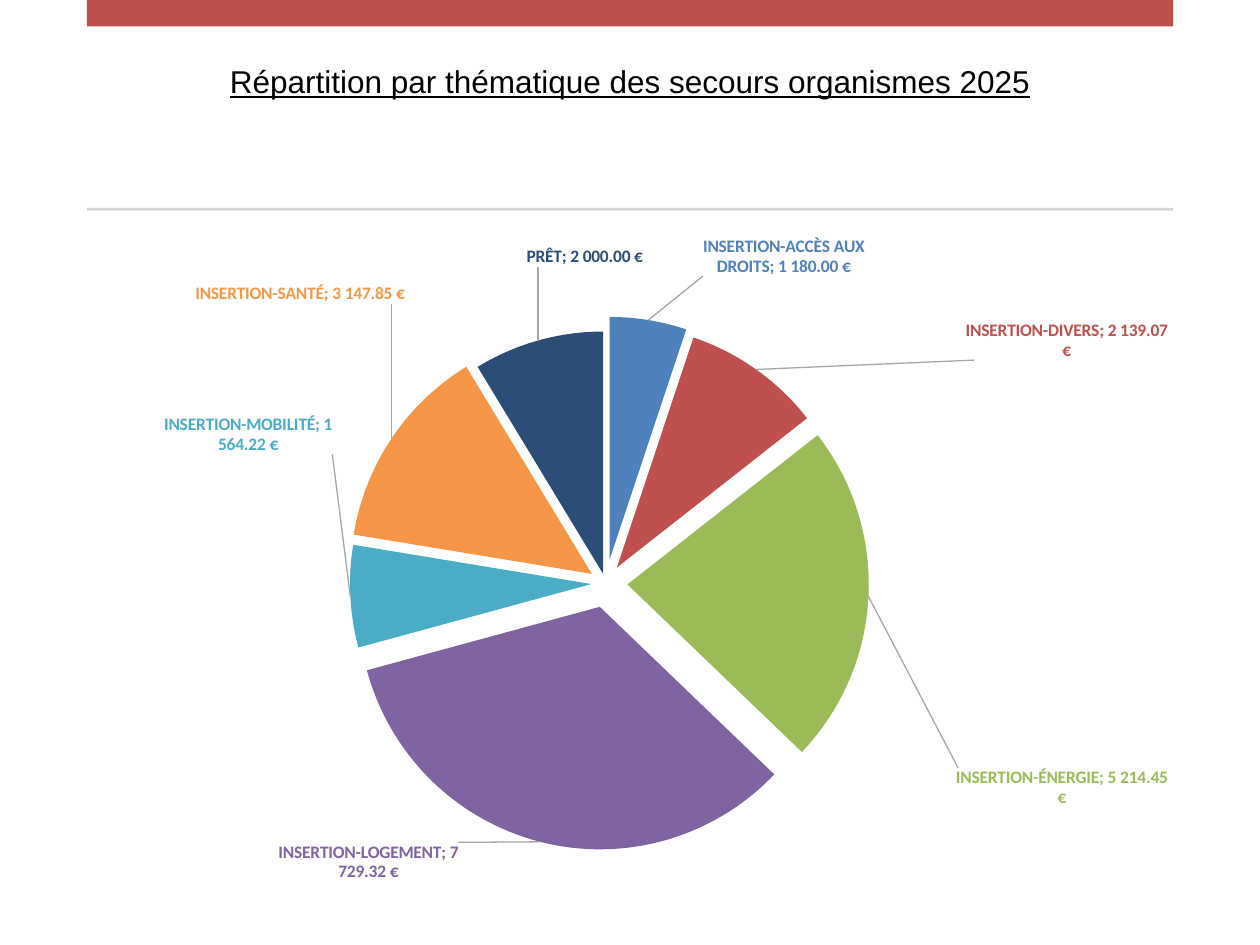
import pptx
import pptx.chart.data
import pptx.dml.color
import pptx.enum.chart
import pptx.enum.shapes
import pptx.enum.text
import pptx.oxml
import pptx.oxml.ns
import pptx.util
from dataclasses import dataclass


@dataclass(frozen=True)
class Theme:
    accent: str = "C0504D"
    rule: str = "D5D5D5"
    leader: str = "A6A6A6"
    ink: str = "000000"
    paper: str = "FFFFFF"
    title_font: str = "Arial"
    chart_font: str = "Calibri"
    title_size: int = 18
    label_size: int = 10


@dataclass(frozen=True)
class Slice:
    name: str
    amount: float
    color: str
    explosion: int
    shift: tuple


THEME = Theme()
WIDTH, HEIGHT = 10, 7.5
MARGIN = 0.069
CONTENT = 1 - 2 * MARGIN
EURO_FORMAT = '#\\ ##0.00" €"'
PLOT_AREA = {
    "xMode": "edge", "yMode": "edge",
    "x": 0.146, "y": 0.172, "w": 0.656, "h": 0.725,
}
SLICES = [
    Slice("INSERTION-ACCÈS AUX DROITS", 1180, "4F81BD", 10, (0.05, -0.055)),
    Slice("INSERTION-DIVERS", 2139.07, "C0504D", 8, (0.2, -0.005)),
    Slice("INSERTION-ÉNERGIE", 5214.45, "9BBB59", 9, (0.077, 0.285)),
    Slice("INSERTION-LOGEMENT", 7729.32, "8064A2", 10, (-0.075, -0.01)),
    Slice("INSERTION-MOBILITÉ", 1564.22, "4BACC6", 6, (-0.01, -0.243)),
    Slice("INSERTION-SANTÉ", 3147.85, "F79646", 7, (0.018, -0.195)),
    Slice("PRÊT", 2000, "2C4D75", 4, (0.1, -0.1)),
]


def rgb(color):
    return pptx.dml.color.RGBColor.from_string(color)


def frame(left, top, width, height):
    shares = ((left, WIDTH), (top, HEIGHT), (width, WIDTH), (height, HEIGHT))
    return [pptx.util.Inches(share * size) for share, size in shares]


def apply(target, values):
    for name, value in values.items():
        setattr(target, name, value)


def chart_xml(tag, body="", **attributes):
    listed = "".join(f' {name}="{value}"' for name, value in attributes.items())
    spaces = pptx.oxml.ns.nsdecls("c", "a")
    return pptx.oxml.parse_xml(f"<c:{tag} {spaces}{listed}>{body}</c:{tag}>")


def manual_layout(position, target=""):
    values = "".join(f'<c:{name} val="{value}"/>' for name, value in position.items())
    return chart_xml("layout", f"<c:manualLayout>{target}{values}</c:manualLayout>")


def add_band(page, top, height, color):
    band = page.shapes.add_shape(
        pptx.enum.shapes.MSO_SHAPE.RECTANGLE, *frame(MARGIN, top, CONTENT, height)
    )
    band.shadow.inherit = False
    band.fill.solid()
    band.fill.fore_color.rgb = rgb(color)
    band.line.fill.background()


def add_title(page, text):
    box = page.shapes.add_textbox(*frame(MARGIN, 0.05, CONTENT, 0.157))
    apply(box.text_frame, {
        "word_wrap": True,
        "vertical_anchor": pptx.enum.text.MSO_ANCHOR.TOP,
        "margin_top": pptx.util.Inches(0.15),
    })
    para = box.text_frame.paragraphs[0]
    apply(para, {"alignment": pptx.enum.text.PP_ALIGN.CENTER, "line_spacing": 0.9})
    span = para.add_run()
    span.text = text
    apply(span.font, {
        "name": THEME.title_font,
        "size": pptx.util.Pt(THEME.title_size),
        "underline": True,
    })
    span.font.color.rgb = rgb(THEME.ink)


def style_slice(point, part):
    point.format.fill.solid()
    point.format.fill.fore_color.rgb = rgb(part.color)
    point.format.line.fill.background()
    shape_format = point._element.xpath(f"c:dPt[c:idx/@val='{point._idx}']/c:spPr")[0]
    shape_format.addprevious(chart_xml("explosion", val=part.explosion))


def style_label(point, part):
    label = point.data_label
    apply(label.font, {
        "name": THEME.chart_font,
        "size": pptx.util.Pt(THEME.label_size),
        "bold": True,
    })
    label.font.color.rgb = rgb(part.color)
    label.position = pptx.enum.chart.XL_LABEL_POSITION.OUTSIDE_END
    node = point._element.xpath(f"c:dLbls/c:dLbl[c:idx/@val='{point._idx}']")[0]
    layout = manual_layout(dict(zip("xy", part.shift)))
    node.xpath("c:idx")[0].addnext(layout)
    code = EURO_FORMAT.replace('"', "&quot;")
    layout.addnext(chart_xml("numFmt", formatCode=code, sourceLinked=0))
    node.xpath("c:showCatName")[0].set("val", "1")
    node.append(chart_xml("separator", "; "))


def add_leader_lines(labels):
    fill = f'<a:solidFill><a:srgbClr val="{THEME.leader}"/></a:solidFill>'
    line = f'<c:spPr><a:ln w="9525">{fill}</a:ln></c:spPr>'
    labels._element.xpath("c:showLeaderLines")[0].addnext(chart_xml("leaderLines", line))


def add_pie(page):
    data = pptx.chart.data.CategoryChartData(number_format=EURO_FORMAT)
    data.categories = [part.name for part in SLICES]
    data.add_series("Series 1", [part.amount for part in SLICES])
    chart = page.shapes.add_chart(
        pptx.enum.chart.XL_CHART_TYPE.PIE, *frame(0.079, 0.239, 0.852, 0.708), data
    ).chart
    apply(chart, {"has_legend": False, "has_title": False})
    apply(chart.font, {"name": THEME.chart_font, "size": pptx.util.Pt(THEME.label_size)})
    chart.font.color.rgb = rgb(THEME.ink)
    plot = chart.plots[0]
    plot.vary_by_categories = True
    series = plot.series[0]
    labels = series.data_labels
    apply(labels, {
        "show_value": True,
        "show_category_name": True,
        "show_percentage": False,
        "number_format": EURO_FORMAT,
        "number_format_is_linked": False,
        "position": pptx.enum.chart.XL_LABEL_POSITION.OUTSIDE_END,
    })
    add_leader_lines(labels)
    for index, part in enumerate(SLICES):
        point = series.points[index]
        style_slice(point, part)
        style_label(point, part)
    area = chart._chartSpace.xpath("c:chart/c:plotArea")[0]
    for layout in area.xpath("c:layout"):
        area.remove(layout)
    area.insert(0, manual_layout(PLOT_AREA, '<c:layoutTarget val="inner"/>'))


def main():
    deck = pptx.Presentation()
    apply(deck, {
        "slide_width": pptx.util.Inches(WIDTH),
        "slide_height": pptx.util.Inches(HEIGHT),
    })
    page = deck.slides.add_slide(deck.slide_layouts[6])
    page.background.fill.solid()
    page.background.fill.fore_color.rgb = rgb(THEME.paper)
    add_title(page, "Répartition par thématique des secours organismes 2025")
    add_band(page, 0, 0.028, THEME.accent)
    add_band(page, 0.22, 0.003, THEME.rule)
    add_pie(page)
    deck.save("out.pptx")


if __name__ == "__main__":
    main()
